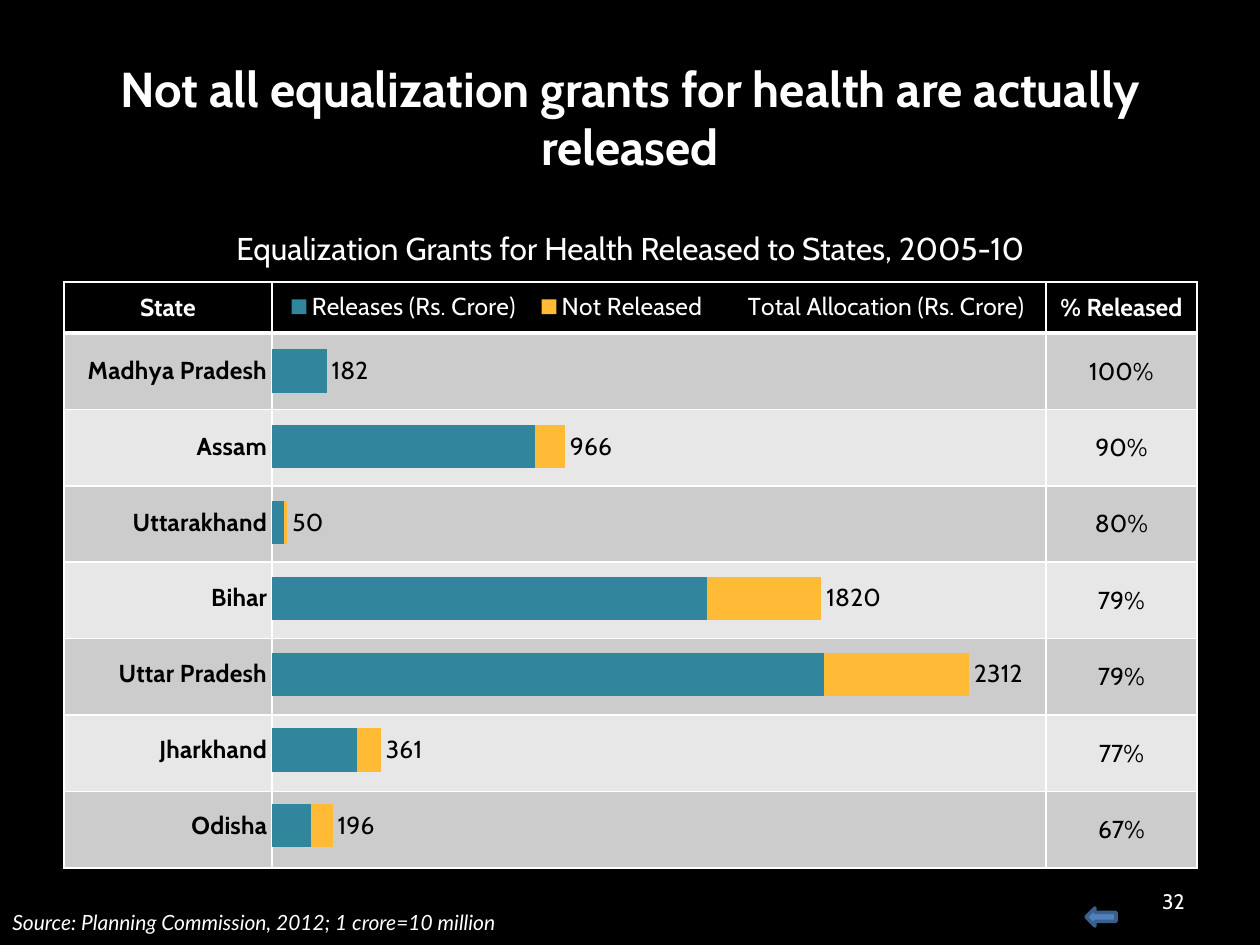
from lxml import etree
from pptx import Presentation
from pptx.chart.data import CategoryChartData
from pptx.dml.color import RGBColor
from pptx.enum.chart import XL_CHART_TYPE, XL_LABEL_POSITION, XL_LEGEND_POSITION, XL_TICK_MARK
from pptx.enum.shapes import MSO_SHAPE
from pptx.enum.text import MSO_ANCHOR, PP_ALIGN
from pptx.oxml import parse_xml
from pptx.oxml.ns import nsdecls, qn
from pptx.util import Pt

SCALE = 914400 / 126
BLACK = RGBColor(0, 0, 0)
WHITE = RGBColor(255, 255, 255)
DARK = RGBColor(0xCC, 0xCC, 0xCC)
LIGHT = RGBColor(0xE7, 0xE7, 0xE7)
TEAL = RGBColor(0x31, 0x85, 0x9C)
AMBER = RGBColor(0xFF, 0xBB, 0x36)
BLUE = RGBColor(0x4F, 0x81, 0xBD)
NAVY = RGBColor(0x3A, 0x5F, 0x8C)
LEFT, MID, RIGHT = PP_ALIGN.LEFT, PP_ALIGN.CENTER, PP_ALIGN.RIGHT
TOP, CENTER = MSO_ANCHOR.TOP, MSO_ANCHOR.MIDDLE
STACKED = XL_CHART_TYPE.BAR_STACKED
BASE = XL_LABEL_POSITION.INSIDE_BASE
ABOVE = XL_LEGEND_POSITION.TOP
NO_TICK = XL_TICK_MARK.NONE
ARROW = MSO_SHAPE.LEFT_ARROW

SHARES = {
    "Madhya Pradesh": "100%", "Assam": "90%", "Uttarakhand": "80%", "Bihar": "79%",
    "Uttar Pradesh": "79%", "Jharkhand": "77%", "Odisha": "67%",
}
SERIES = [
    ("Releases (Rs. Crore)", (180, 870, 40, 1440, 1830, 280, 130), TEAL),
    ("Not Released", (0, 100, 10, 380, 480, 80, 70), AMBER),
    ("Total Allocation (Rs. Crore)", (182, 966, 50, 1820, 2312, 361, 196), None),
]


def px(*sizes):
    """Turn px into EMU."""
    return [round(size * SCALE) for size in sizes]


def style(font, size=14, color=BLACK, bold=False, italic=False, face="Cabin"):
    """Format one font."""
    font.name, font.size, font.bold, font.italic = face, Pt(size), bold, italic
    font.color.rgb = color


def write(frame, text, align=MID, anchor=CENTER, **form):
    """Put formatted text into a frame."""
    frame.word_wrap = True
    frame.vertical_anchor = anchor
    para = frame.paragraphs[0]
    para.alignment = align
    run = para.add_run()
    run.text = text
    style(run.font, **form)


def add_text(slide, box, text, **form):
    """Add a text box."""
    write(slide.shapes.add_textbox(*px(*box)).text_frame, text, **form)


def add_title(slide, box, text):
    """Place and fill the title."""
    title = slide.shapes.title
    title.left, title.top, title.width, title.height = px(*box)
    write(title.text_frame, text, size=28, color=WHITE, bold=True)


def edge(cell, base):
    """Draw white borders round a cell, with the given base width."""
    props = cell._tc.get_or_add_tcPr()
    for side, width in zip("LRTB", (1, 1, 1, base)):
        props.append(parse_xml(
            f'<a:ln{side} {nsdecls("a")} w="{Pt(width)}"><a:solidFill>'
            f'<a:srgbClr val="{WHITE}"/></a:solidFill></a:ln{side}>'))


def add_grid(slide, box, head=51, cols=(208, 774, 151)):
    """Add the banded table behind the chart."""
    rows = [("State", "", "% Released")] + [("", "", share) for share in SHARES.values()]
    table = slide.shapes.add_table(len(rows), len(cols), *px(*box)).table
    for col, width in zip(table.columns, cols):
        col.width, = px(width)
    for i, texts in enumerate(rows):
        first = i == 0
        table.rows[i].height, = px(head if first else (box[3] - head) / len(SHARES))
        for cell, text in zip(table.rows[i].cells, texts):
            edge(cell, 3 if first else 1)
            cell.fill.solid()
            cell.fill.fore_color.rgb = BLACK if first else DARK if i % 2 else LIGHT
            cell.vertical_anchor = CENTER
            para = cell.text_frame.paragraphs[0]
            para.alignment = MID
            style(para.font)
            if text:
                write(cell.text_frame, text, color=WHITE if first else BLACK, bold=first)


def layout(x, y, w, h, inner=False):
    """Make a manual chart layout from fractions."""
    root = parse_xml(f'<c:layout {nsdecls("c")}><c:manualLayout/></c:layout>')
    parts = [("layoutTarget", "inner")] if inner else []
    parts += [("xMode", "edge"), ("yMode", "edge"), ("x", x), ("y", y), ("w", w), ("h", h)]
    for tag, val in parts:
        etree.SubElement(root[0], qn(f"c:{tag}")).set("val", str(val))
    return root


def add_bars(slide, box):
    """Add the stacked bars with state names and totals."""
    data = CategoryChartData(number_format="0")
    data.categories = list(SHARES)
    for name, vals, _ in SERIES:
        data.add_series(name, vals)
    chart = slide.shapes.add_chart(STACKED, *px(*box), data).chart
    chart.has_title = False
    style(chart.font)
    plot = chart.plots[0]
    plot.gap_width, plot.overlap = 75, 100
    for bar, (_, _, color) in zip(plot.series, SERIES):
        if color is None:
            bar.format.fill.background()
            tags = bar.data_labels
            tags.show_value, tags.position = True, BASE
            tags.number_format, tags.number_format_is_linked = "0", False
            style(tags.font)
        else:
            bar.format.fill.solid()
            bar.format.fill.fore_color.rgb = color
    names = chart.category_axis
    names.reverse_order = True
    names.major_tick_mark = names.minor_tick_mark = NO_TICK
    names.format.line.color.rgb, names.format.line.width = WHITE, Pt(0.75)
    style(names.tick_labels.font, bold=True)
    scale = chart.value_axis
    scale.minimum_scale, scale.maximum_scale = 0, 2500
    scale.has_major_gridlines = scale.visible = False
    chart.has_legend = True
    key = chart.legend
    key.position, key.include_in_layout = ABOVE, False
    style(key.font, color=WHITE)
    key._element.find(qn("c:legendPos")).addnext(layout(0.2, 0.01, 0.73, 0.06))
    area = chart._chartSpace.chart.plotArea
    for old in area.findall(qn("c:layout")):
        area.remove(old)
    area.insert(0, layout(0.198, 0.083, 0.717, 0.86, inner=True))


def add_arrow(slide, box):
    """Add the back arrow."""
    arrow = slide.shapes.add_shape(ARROW, *px(*box))
    arrow.shadow.inherit = False
    arrow.fill.solid()
    arrow.fill.fore_color.rgb = BLUE
    arrow.line.color.rgb, arrow.line.width = NAVY, Pt(2)


def main():
    """Build the slide and save it."""
    deck = Presentation()
    deck.slide_width, deck.slide_height = px(1260, 945)
    slide = deck.slides.add_slide(deck.slide_layouts[5])
    slide.background.fill.solid()
    slide.background.fill.fore_color.rgb = BLACK
    add_title(slide, (63, 38, 1134, 158),
              "Not all equalization grants for health are actually released")
    add_grid(slide, (64, 282, 1133, 586))
    add_text(slide, (903, 876, 294, 50), "32", align=RIGHT, size=12, color=WHITE)
    add_text(slide, (64, 223, 1133, 50), anchor=TOP, size=18, color=WHITE,
             text="Equalization Grants for Health Released to States, 2005-10")
    add_bars(slide, (64, 282, 1052, 617))
    add_text(slide, (0, 902, 1260, 40), "Source: Planning Commission, 2012; 1 crore=10 million",
             align=LEFT, size=12, color=WHITE, italic=True, face="Lato")
    add_arrow(slide, (1086, 908, 30, 18))
    deck.save("out.pptx")


if __name__ == "__main__":
    main()
